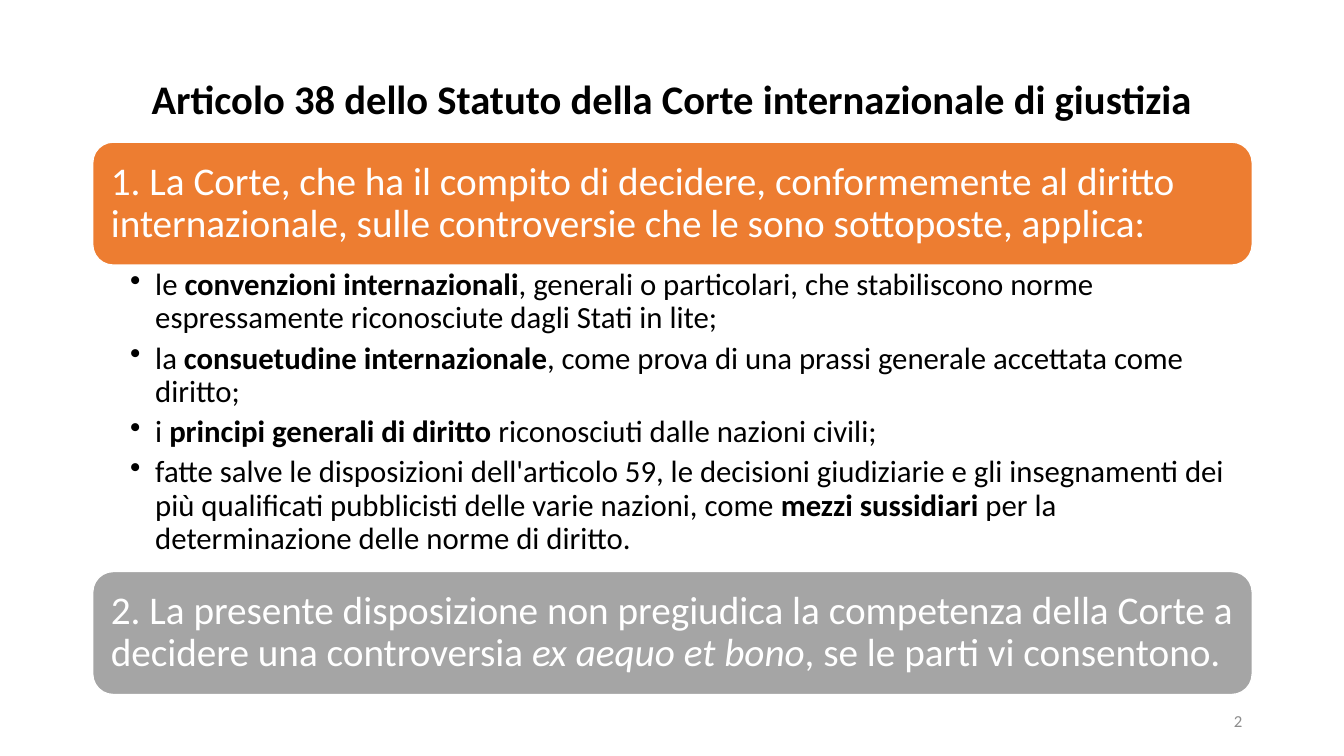
"""Build the slide on Article 38 of the Statute of the International Court of Justice."""
from lxml.etree import SubElement
from pptx import Presentation
from pptx.dml.color import RGBColor
from pptx.enum.shapes import MSO_SHAPE
from pptx.enum.text import MSO_ANCHOR, PP_ALIGN
from pptx.oxml.ns import qn
from pptx.util import Inches, Pt

LEFT, WIDTH = Inches(0.92), Inches(11.5)


def rgb(value):
    return RGBColor.from_string(value)


def write(paragraph, runs, size, color, align=PP_ALIGN.LEFT, spacing=0.9):
    paragraph.alignment = align
    paragraph.line_spacing = spacing
    paragraph.font.name = "Calibri"
    paragraph.font.size = Pt(size)
    paragraph.font.color.rgb = rgb(color)
    for text, style in runs:
        run = paragraph.add_run()
        run.text = text
        if style == "bold":
            run.font.bold = True
        elif style == "italic":
            run.font.italic = True


prs = Presentation()
prs.slide_width, prs.slide_height = Inches(13.33), Inches(7.5)
slide = prs.slides.add_slide(prs.slide_layouts[6])

title = slide.shapes.add_textbox(LEFT, Inches(0.61), WIDTH, Inches(1.24)).text_frame
title.word_wrap = True
title.vertical_anchor = MSO_ANCHOR.MIDDLE
title.margin_bottom = Inches(0.49)
write(title.paragraphs[0],
      [("Articolo 38 dello Statuto della Corte internazionale di giustizia", "bold")],
      29, "000000", PP_ALIGN.CENTER)

clauses = [
    (1.41, "ED7D31", [
        ("1. La Corte, che ha il compito di decidere, conformemente al diritto "
         "internazionale, sulle controversie che le sono sottoposte, applica:", "")]),
    (5.67, "A5A5A5", [
        ("2. La presente disposizione non pregiudica la competenza della Corte a "
         "decidere una controversia ", ""),
        ("ex aequo et bono", "italic"),
        (", se le parti vi consentono.", "")]),
]
for top, fill, runs in clauses:
    clause = slide.shapes.add_shape(MSO_SHAPE.ROUNDED_RECTANGLE,
                                    LEFT, Inches(top), WIDTH, Inches(1.22))
    clause.shadow.inherit = False
    clause.fill.solid()
    clause.fill.fore_color.rgb = rgb(fill)
    clause.line.color.rgb = rgb("FFFFFF")
    clause.line.width = Pt(1)
    frame = clause.text_frame
    frame.word_wrap = True
    frame.vertical_anchor = MSO_ANCHOR.MIDDLE
    frame.margin_left = frame.margin_right = Inches(0.12)
    write(frame.paragraphs[0], runs, 28, "FFFFFF")

sources = [
    [("le ", ""), ("convenzioni internazionali", "bold"),
     (", generali o particolari, che stabiliscono norme espressamente "
      "riconosciute dagli Stati in lite;", "")],
    [("la ", ""), ("consuetudine internazionale", "bold"),
     (", come prova di una prassi generale accettata come diritto;", "")],
    [("i ", ""), ("principi generali di diritto ", "bold"),
     ("riconosciuti dalle nazioni civili;", "")],
    [("fatte salve le disposizioni dell'articolo 59, le decisioni giudiziarie e gli "
      "insegnamenti dei più qualificati pubblicisti delle varie nazioni, come ", ""),
     ("mezzi sussidiari ", "bold"),
     ("per la determinazione delle norme di diritto.", "")],
]
source_list = slide.shapes.add_textbox(LEFT, Inches(2.63), WIDTH, Inches(3.04)).text_frame
source_list.word_wrap = True
source_list.margin_left, source_list.margin_right = Inches(0.37), Inches(0.22)
source_list.margin_top = source_list.margin_bottom = Inches(0.04)
for index, runs in enumerate(sources):
    item = source_list.add_paragraph() if index else source_list.paragraphs[0]
    write(item, runs, 22, "000000")
    item.space_after = Pt(5)
    properties = item._p.get_or_add_pPr()
    properties.set("marL", str(Inches(0.25)))
    properties.set("indent", str(Inches(-0.25)))
    bullet = SubElement(properties, qn("a:buChar"), char="•")
    properties.find(qn("a:defRPr")).addprevious(bullet)

page_number = slide.shapes.add_textbox(Inches(9.42), Inches(6.95),
                                       Inches(3), Inches(0.4)).text_frame
page_number.word_wrap = True
page_number.vertical_anchor = MSO_ANCHOR.MIDDLE
write(page_number.paragraphs[0], [("2", "")], 12, "8C8C8C", PP_ALIGN.RIGHT, 1.0)

prs.save("out.pptx")
